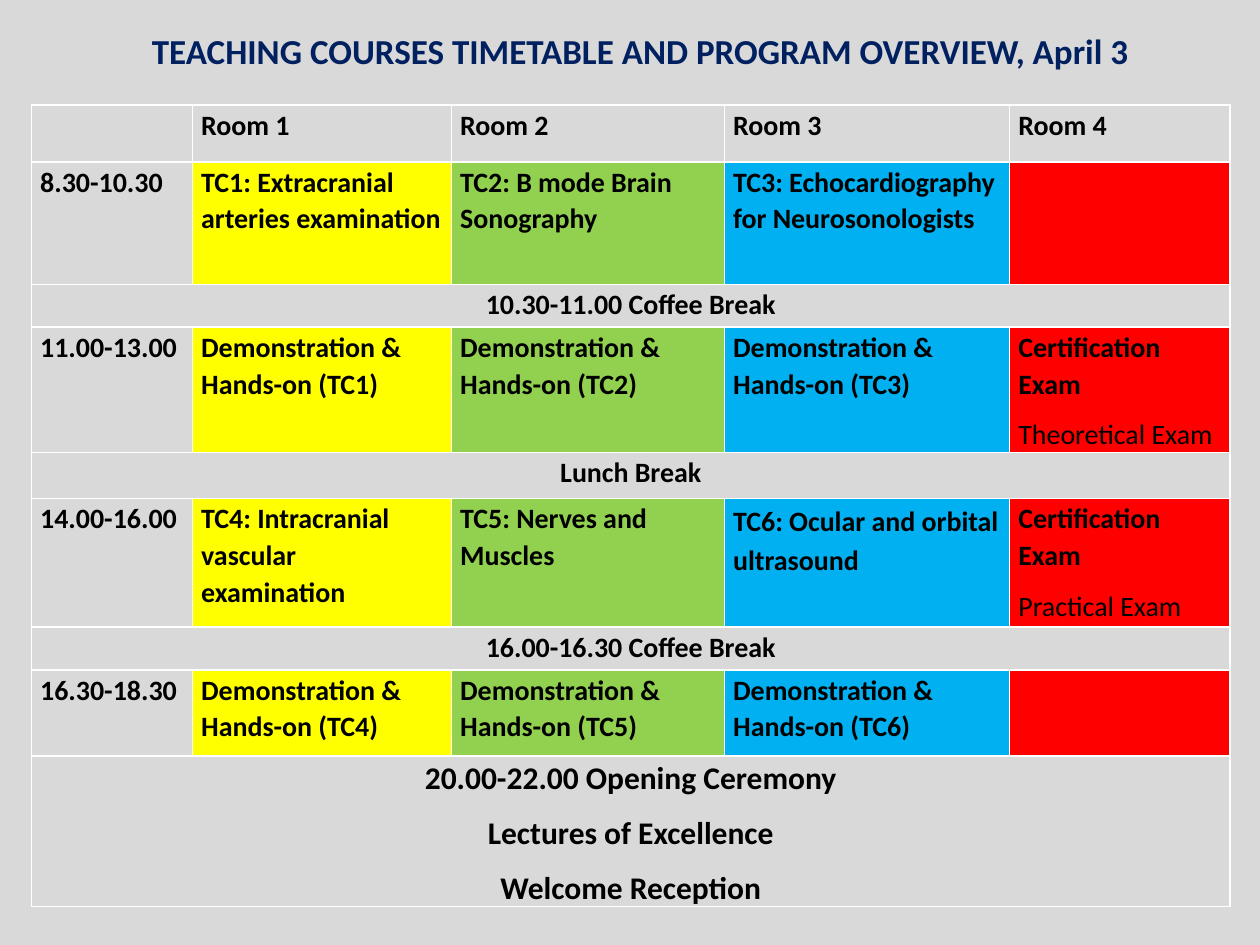
from lxml.etree import SubElement
from pptx import Presentation
from pptx.dml.color import RGBColor
from pptx.enum.text import MSO_ANCHOR, MSO_AUTO_SIZE, PP_ALIGN
from pptx.oxml.ns import qn
from pptx.util import Pt

COLORS = {"grey": "D9D9D9", "yellow": "FFFF00", "green": "92D050", "blue": "00B0F0",
          "red": "FF0000", "navy": "002060", "black": "000000", "white": "FFFFFF"}
FONT = "Calibri"
ROOM_FILLS = ["grey", "yellow", "green", "blue", "red"]
COLUMN_WIDTHS = [92, 148, 156, 163, 126]
ROW_HEIGHTS = [32.5, 70, 24.5, 71.5, 26.5, 73.5, 24.5, 49, 35]
EXAM = "Certification Exam"
OCULAR = "TC6: Ocular and orbital ultrasound"


def demonstrations(time, first, exam=""):
    """Return a row of three consecutive hands-on sessions and the exam cell."""
    return [time, *(f"Demonstration & Hands-on (TC{first + i})" for i in range(3)), exam]


SCHEDULE = [
    ["", *(f"Room {number}" for number in range(1, 5))],
    ["8.30-10.30", "TC1: Extracranial arteries examination", "TC2: B mode Brain Sonography",
     "TC3: Echocardiography for Neurosonologists", ""],
    ["10.30-11.00 Coffee Break"],
    demonstrations("11.00-13.00", 1, f"{EXAM}\nTheoretical Exam"),
    ["Lunch Break"],
    ["14.00-16.00", "TC4: Intracranial vascular examination", "TC5: Nerves and Muscles",
     OCULAR, f"{EXAM}\nPractical Exam"],
    ["16.00-16.30 Coffee Break"],
    demonstrations("16.30-18.30", 4),
    ["20.00-22.00 Opening Ceremony\nLectures of Excellence\nWelcome Reception"],
]


def rgb(name):
    """Look up a named colour."""
    return RGBColor.from_string(COLORS[name])


def style_font(font, size, color, bold=True):
    """Set the typeface, size, colour and weight of a font."""
    font.name, font.size, font.bold = FONT, Pt(size), bold
    font.color.rgb = rgb(color)


def add_borders(cell):
    """Draw a thin white line on each side of a cell."""
    properties = cell._tc.get_or_add_tcPr()
    for side in ("a:lnL", "a:lnR", "a:lnT", "a:lnB"):
        line = SubElement(properties, qn(side), w=str(Pt(1)))
        fill = SubElement(line, qn("a:solidFill"))
        SubElement(fill, qn("a:srgbClr"), val=COLORS["white"])


def write_cell(cell, text, size, align):
    """Write the lines of a cell and format its paragraphs."""
    cell.margin_left = cell.margin_right = Pt(5)
    cell.margin_top, cell.margin_bottom = Pt(0.7), Pt(0)
    cell.text = text
    for para in cell.text_frame.paragraphs:
        para.alignment = align
        para.line_spacing = 1.15 if text == OCULAR else 1.07
        para.space_after = Pt(0 if text == OCULAR else 8)
        bold = para.text not in ("Theoretical Exam", "Practical Exam")
        style_font(para.font, size, "black", bold)


def add_title(page, left, top, width, height):
    """Place the heading in the title placeholder."""
    title = page.shapes.title
    title.left, title.top, title.width, title.height = map(Pt, (left, top, width, height))
    frame = title.text_frame
    frame.text = "TEACHING COURSES TIMETABLE AND PROGRAM OVERVIEW, April 3"
    frame.word_wrap = True
    frame.auto_size = MSO_AUTO_SIZE.SHAPE_TO_FIT_TEXT
    frame.vertical_anchor = MSO_ANCHOR.TOP
    para = frame.paragraphs[0]
    para.alignment = PP_ALIGN.CENTER
    para.space_before = para.space_after = Pt(6)
    style_font(para.font, 20, "navy")


def add_timetable(page, left, top):
    """Build the timetable with one column per room and full-width breaks."""
    box = page.shapes.add_table(len(SCHEDULE), len(COLUMN_WIDTHS), Pt(left), Pt(top),
                                Pt(sum(COLUMN_WIDTHS)), Pt(sum(ROW_HEIGHTS)))
    table = box.table
    table.first_row = table.horz_banding = False
    for column, width in zip(table.columns, COLUMN_WIDTHS):
        column.width = Pt(width)
    for index, (row, height, texts) in enumerate(zip(table.rows, ROW_HEIGHTS, SCHEDULE)):
        row.height = Pt(height)
        full_width = len(texts) == 1
        for cell, color in zip(row.cells, ROOM_FILLS):
            add_borders(cell)
            if index == 0:
                cell.fill.background()
            else:
                cell.fill.solid()
                cell.fill.fore_color.rgb = rgb("grey" if full_width else color)
        if full_width:
            row.cells[0].merge(row.cells[len(COLUMN_WIDTHS) - 1])
        size = 18 if index == len(SCHEDULE) - 1 else 16
        align = PP_ALIGN.CENTER if full_width else PP_ALIGN.LEFT
        for cell, text in zip(row.cells, texts):
            write_cell(cell, text, size, align)


def main():
    """Build and save the timetable slide."""
    deck = Presentation()
    deck.slide_width, deck.slide_height = Pt(720), Pt(540)
    page = deck.slides.add_slide(deck.slide_layouts[5])
    page.background.fill.solid()
    page.background.fill.fore_color.rgb = rgb("grey")
    add_timetable(page, 18, 60)
    add_title(page, 72, 13, 588, 32)
    deck.save("out.pptx")


if __name__ == "__main__":
    main()
